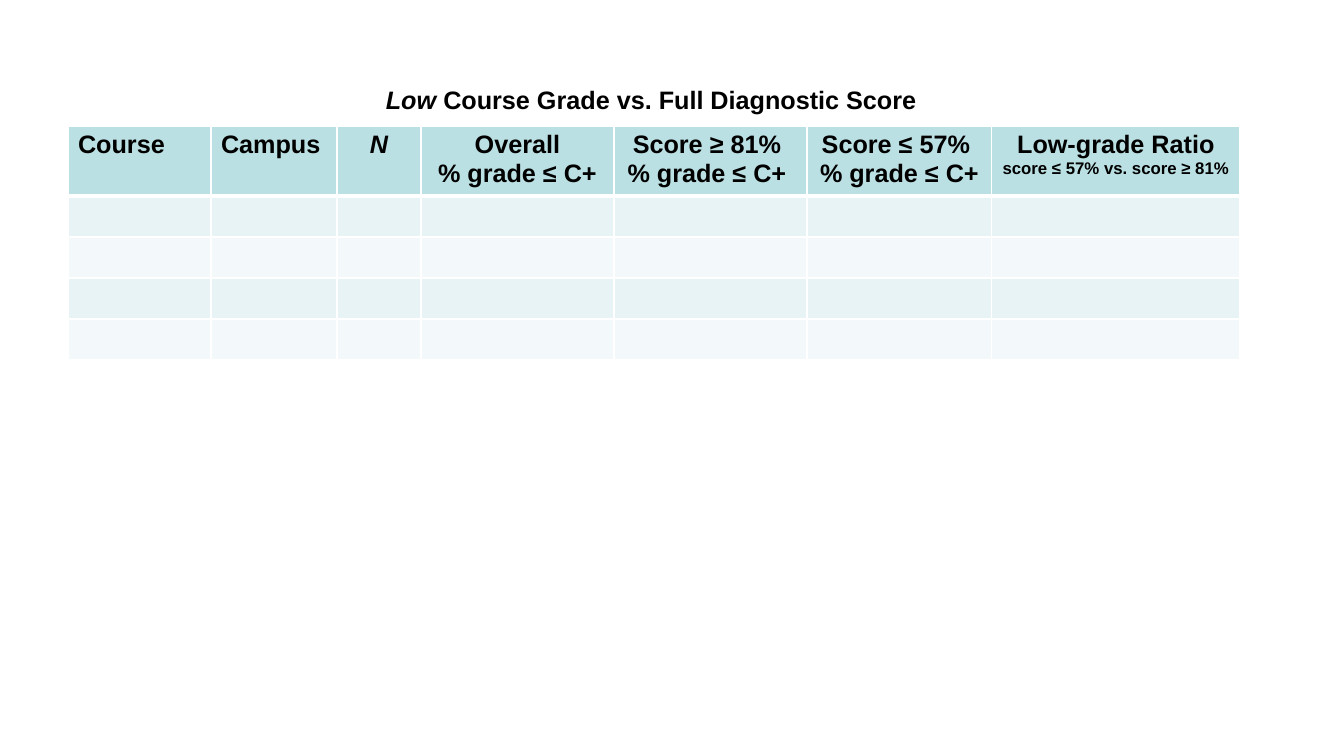
from lxml import etree
from pptx import Presentation
from pptx.dml.color import RGBColor
from pptx.enum.text import MSO_ANCHOR, PP_ALIGN
from pptx.oxml.ns import qn
from pptx.util import Emu, Pt

LEFT, CENTER = PP_ALIGN.LEFT, PP_ALIGN.CENTER
BOTTOM = MSO_ANCHOR.BOTTOM

# Content: each paragraph is a list of (text, size, italic) spans
TITLE = [("Low", 18, True), (" Course Grade vs. Full Diagnostic Score", 18, False)]
HEADERS = [  # (width in px, alignment, paragraphs)
    (143, LEFT, [[("Course", 18, False)]]),
    (126, LEFT, [[("Campus", 18, False)]]),
    (84, CENTER, [[("N", 18, True)]]),
    (193, CENTER, [[("Overall", 18, False)], [("% grade ≤ C+", 18, False)]]),
    (193, CENTER, [[("Score ≥ 81% ", 18, False)], [("% grade ≤ C+ ", 18, False)]]),
    (185, CENTER, [[("Score ≤ 57% ", 18, False)], [("% grade ≤ C+", 18, False)]]),
    (248, CENTER, [[("Low-grade Ratio", 18, False),
                    (" score ≤ 57% vs. score ≥ 81%", 12, False)]]),
]
ROW_HEIGHTS = [70] + [41] * 4

FONT = "Arial"
BLACK = RGBColor(0x00, 0x00, 0x00)
WHITE = RGBColor(0xFF, 0xFF, 0xFF)
HEADER_FILL = RGBColor(0xBB, 0xE0, 0xE3)
BAND_FILLS = [RGBColor(0xF3, 0xF9, 0xFA), RGBColor(0xE7, 0xF3, 0xF4)]
THIN, THICK = 1, 3


def px(length):
    return Emu(round(length * 914400 / 100.8))


def write_spans(para, spans):
    for text, size, italic in spans:
        span = para.add_run()
        span.text = text
        font = span.font
        font.name, font.size = FONT, Pt(size)
        font.bold, font.italic = True, italic
        font.color.rgb = BLACK


def set_borders(cell, top, bottom):
    properties = cell._tc.get_or_add_tcPr()
    for side, width in (("L", THIN), ("R", THIN), ("T", top), ("B", bottom)):
        line = etree.SubElement(properties, qn(f"a:ln{side}"), w=str(Pt(width)))
        fill = etree.SubElement(line, qn("a:solidFill"))
        etree.SubElement(fill, qn("a:srgbClr"), val=str(WHITE))


deck = Presentation()
deck.slide_width, deck.slide_height = px(1344), px(756)
page = deck.slides.add_slide(deck.slide_layouts[6])

# Table grid with banded rows
widths = [width for width, _, _ in HEADERS]
table = page.shapes.add_table(len(ROW_HEIGHTS), len(HEADERS), px(68), px(126),
                              px(sum(widths)), px(sum(ROW_HEIGHTS))).table
for column, width in zip(table.columns, widths):
    column.width = px(width)
for index, (row, height) in enumerate(zip(table.rows, ROW_HEIGHTS)):
    row.height = px(height)
    for cell in row.cells:
        set_borders(cell, THICK if index == 1 else THIN, THICK if index == 0 else THIN)
        cell.fill.solid()
        cell.fill.fore_color.rgb = BAND_FILLS[index % 2] if index else HEADER_FILL

# Header text
for cell, (_, alignment, paragraphs) in zip(table.rows[0].cells, HEADERS):
    frame = cell.text_frame
    for index, spans in enumerate(paragraphs):
        para = frame.add_paragraph() if index else frame.paragraphs[0]
        para.alignment = alignment
        write_spans(para, spans)

# Title above the table
box = page.shapes.add_textbox(px(376), px(48), px(554), px(72))
box.text_frame.word_wrap = True
box.text_frame.vertical_anchor = BOTTOM
write_spans(box.text_frame.paragraphs[0], TITLE)

deck.save("out.pptx")
